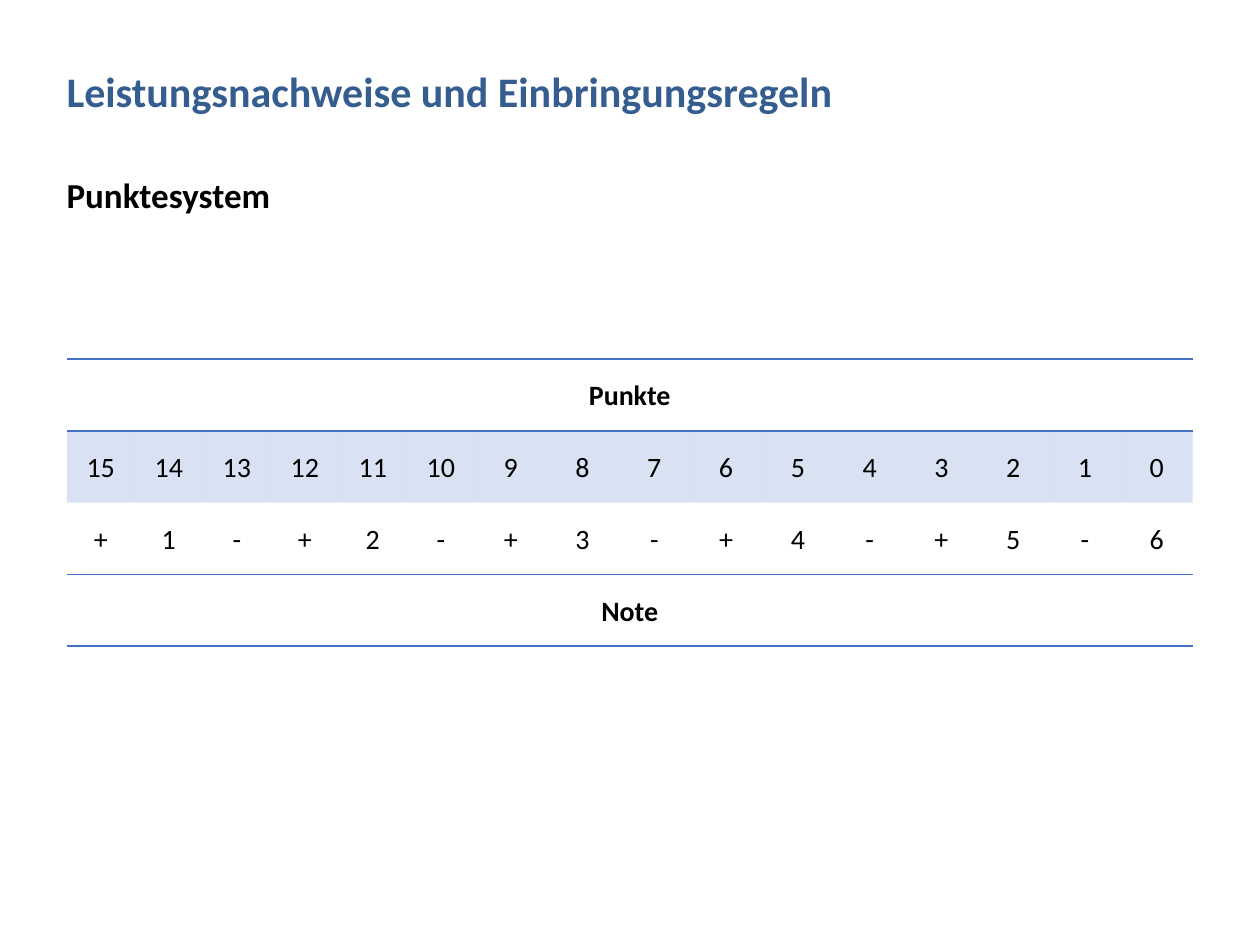
from dataclasses import dataclass

from lxml import etree
from pptx import Presentation
from pptx import util as u
from pptx.dml.color import RGBColor
from pptx.enum import text
from pptx.oxml.ns import qn


@dataclass(frozen=True)
class Theme:
    font: str = "Calibri"
    heading: str = "355D90"
    ink: str = "000000"
    accent: str = "4472C4"
    title_size: int = 24
    subtitle_size: int = 20
    table_size: int = 16


theme = Theme()
NO_STYLE_NO_GRID = "{2D5ABB26-0587-4C30-8999-92F81FD0307C}"


def style(paragraph, size, color, bold):
    font = paragraph.font
    font.name, font.size, font.bold = theme.font, u.Pt(size), bold
    font.color.rgb = RGBColor.from_string(color)


def add_rules(cell):
    """Draw the top and bottom border of a cell."""
    properties = cell._tc.get_or_add_tcPr()
    for position, side in enumerate(("a:lnT", "a:lnB")):
        line = etree.Element(qn(side), w=str(u.Pt(1)))
        fill = etree.SubElement(line, qn("a:solidFill"))
        etree.SubElement(fill, qn("a:srgbClr"), val=theme.accent)
        properties.insert(position, line)


prs = Presentation()
prs.slide_width, prs.slide_height = u.Inches(10), u.Inches(7.5)
slide = prs.slides.add_slide(prs.slide_layouts[6])

# Headings
headings = [
    ("Leistungsnachweise und Einbringungsregeln", 0.47, 9.37, 0.87,
     theme.title_size, theme.heading),
    ("Punktesystem", 1.33, 9.05, 0.44, theme.subtitle_size, theme.ink),
]
for wording, top, width, height, size, color in headings:
    heading = slide.shapes.add_textbox(
        u.Inches(0.43), u.Inches(top), u.Inches(width), u.Inches(height))
    heading.text_frame.word_wrap = True
    heading.text_frame.text = wording
    style(heading.text_frame.paragraphs[0], size, color, True)

# Points and the grades they stand for
points = [str(point) for point in range(15, -1, -1)]
grades = [mark for grade in range(1, 6) for mark in ("+", str(grade), "-")] + ["6"]
rows = [["Punkte"], points, grades, ["Note"]]

scale = slide.shapes.add_table(
    len(rows), len(points), u.Inches(0.53), u.Inches(2.85),
    u.Inches(8.95), u.Inches(2.28)).table
scale.first_row = scale.horz_banding = False
scale._tbl.tblPr.find(qn("a:tableStyleId")).text = NO_STYLE_NO_GRID
for index, column in enumerate(scale.columns):
    column.width = u.Inches(0.54 if index < 6 else 0.57)

for row_index, labels in enumerate(rows):
    scale.rows[row_index].height = u.Inches(0.57)
    is_caption = len(labels) == 1
    if is_caption:
        scale.cell(row_index, 0).merge(scale.cell(row_index, len(points) - 1))
        for column_index in range(len(points)):
            add_rules(scale.cell(row_index, column_index))

    for column_index, label in enumerate(labels):
        cell = scale.cell(row_index, column_index)
        cell.text = label
        cell.vertical_anchor = text.MSO_ANCHOR.MIDDLE
        cell.margin_left = cell.margin_right = u.Inches(0.07)
        cell.margin_top = cell.margin_bottom = 0
        paragraph = cell.text_frame.paragraphs[0]
        paragraph.alignment = text.PP_ALIGN.CENTER
        paragraph.line_spacing = 1.07
        style(paragraph, theme.table_size, theme.ink, is_caption)
        if labels is points:
            cell.fill.solid()
            cell.fill.fore_color.rgb = RGBColor.from_string(theme.accent)
            tint = cell._tc.tcPr.find(".//" + qn("a:srgbClr"))
            etree.SubElement(tint, qn("a:alpha"), val="20000")
        else:
            cell.fill.background()

prs.save("out.pptx")
